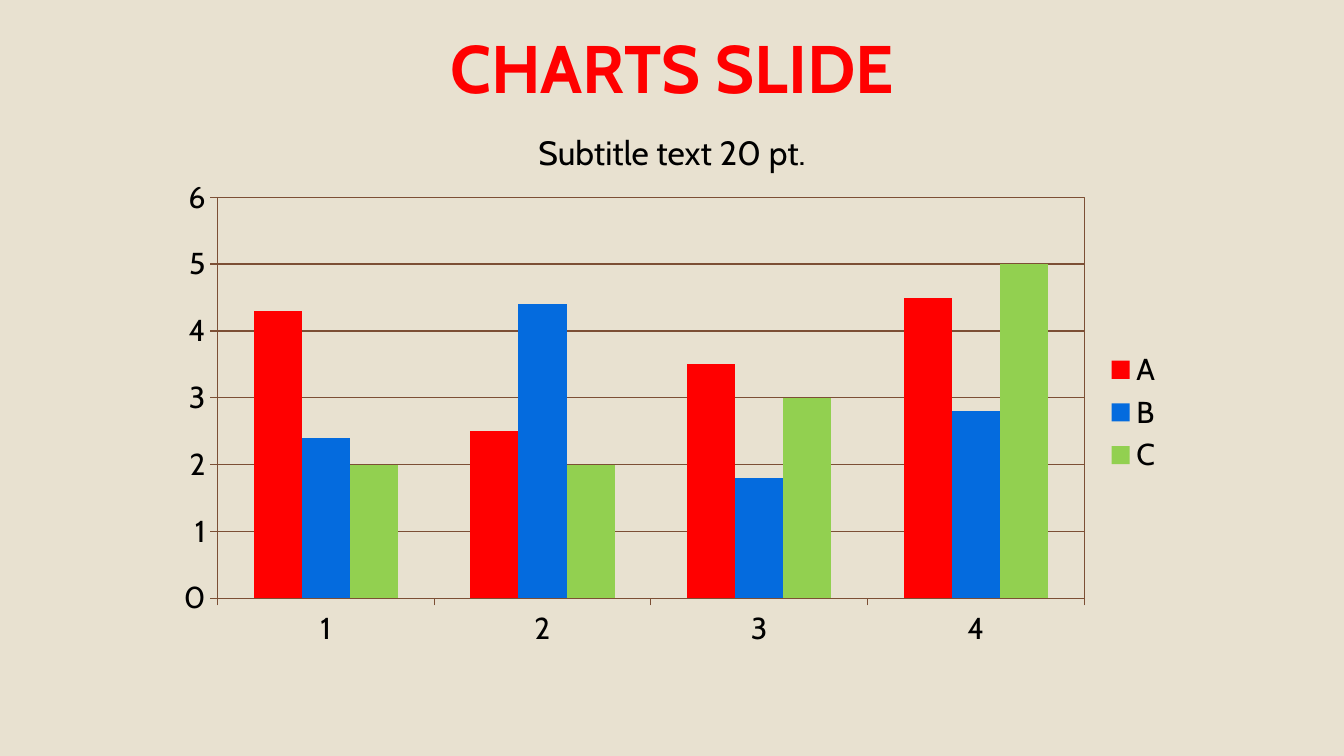
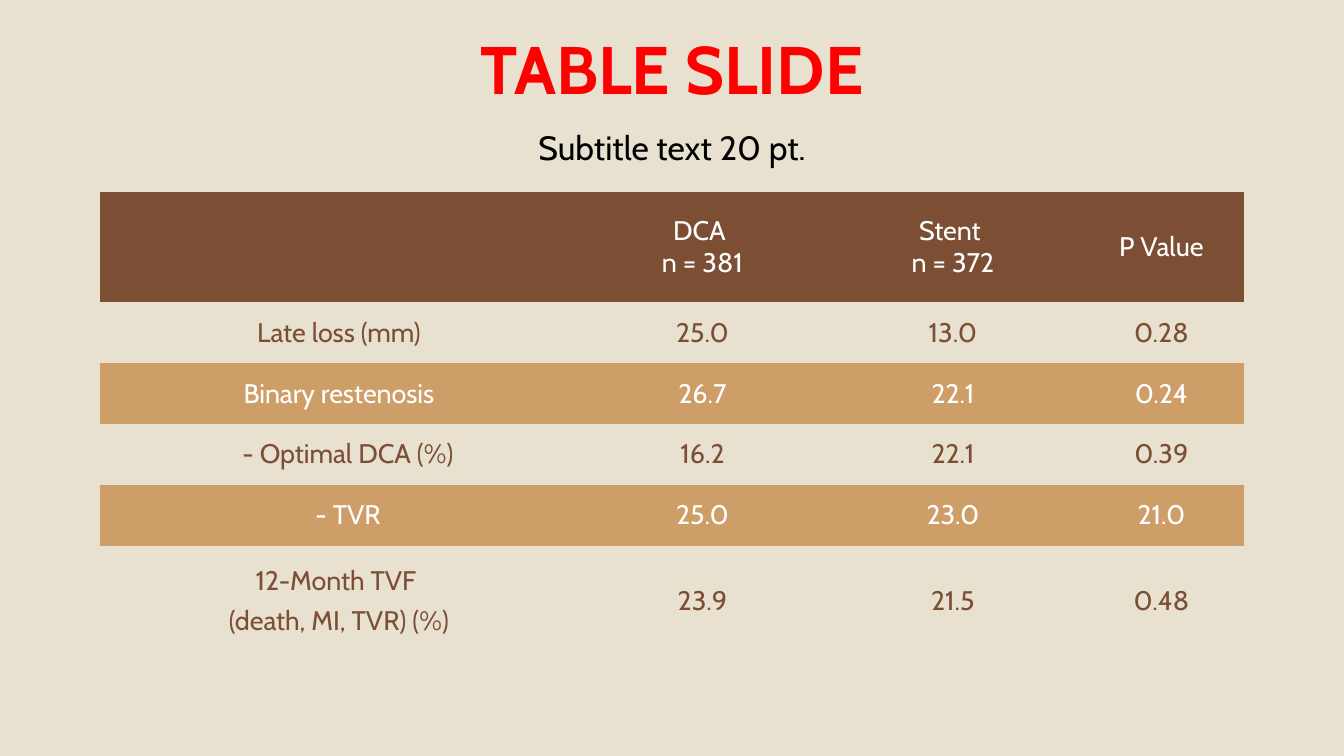
from lxml import etree
from pptx import Presentation
from pptx.chart.data import CategoryChartData
from pptx.dml.color import RGBColor
from pptx.enum.chart import XL_CHART_TYPE, XL_LEGEND_POSITION, XL_TICK_MARK
from pptx.enum.text import MSO_ANCHOR, MSO_AUTO_SIZE, PP_ALIGN
from pptx.oxml import parse_xml
from pptx.oxml.ns import nsdecls, qn
from pptx.util import Emu, Pt

FONT = "Cabin"
SAND, RED, BLUE, GREEN = "E8E1D0", "FF0000", "046BDE", "92D050"
BROWN, TAN, BLACK, WHITE = "7C4F35", "CD9E67", "000000", "FFFFFF"
NO_GRID_STYLE = "{2D5ABB26-0587-4C30-8999-92F81FD0307C}"
LEFT, WIDTH = 100, 1144
SUBTITLE = "Subtitle text 20 pt."

CATEGORIES = ["1", "2", "3", "4"]
SERIES = [
    ("A", RED, (4.3, 2.5, 3.5, 4.5)),
    ("B", BLUE, (2.4, 4.4, 1.8, 2.8)),
    ("C", GREEN, (2, 2, 3, 5)),
]

ROWS = [
    ["", "DCA \nn = 381", "Stent \nn = 372", "P Value"],
    ["Late loss (mm)", "25.0", "13.0", "0.28"],
    ["Binary restenosis", "26.7", "22.1", "0.24"],
    ["- Optimal DCA (%)", "16.2", "22.1", "0.39"],
    ["- TVR", "25.0", "23.0", "21.0"],
    [("12-Month TVF ", "(death, MI, TVR) (%)"), "23.9", "21.5", "0.48"],
]
COL_WIDTHS = [478, 249, 252, 165]
ROW_HEIGHTS = [110, 61, 61, 61, 61, 110]


def px(n):
    return Emu(round(n * 914400 / 121))


def rgb(value):
    return RGBColor.from_string(value)


def style_font(font, size, color, bold=False):
    font.name = FONT
    font.size = Pt(size)
    font.bold = bold
    font.color.rgb = rgb(color)


def style_line(line, color=BROWN):
    line.color.rgb = rgb(color)
    line.width = Pt(0.75)


def write(p, text, size, color, bold=False):
    p.alignment = PP_ALIGN.CENTER
    for i, line in enumerate(text.split("\n")):
        if i:
            p.add_line_break()
        r = p.add_run()
        r.text = line
        style_font(r.font, size, color, bold)


def fill_heading(sp, top, height, text, size, color, bold=False):
    sp.left, sp.top, sp.width, sp.height = px(LEFT), px(top), px(WIDTH), px(height)
    tf = sp.text_frame
    tf.word_wrap = True
    tf.auto_size = MSO_AUTO_SIZE.NONE
    tf.vertical_anchor = MSO_ANCHOR.MIDDLE
    tf.margin_left = tf.margin_right = tf.margin_top = tf.margin_bottom = px(6)
    p = tf.paragraphs[0]
    p.line_spacing = 0.9
    p.space_before = Pt(0)
    write(p, text, size, color, bold)


def add_headed_slide(prs, title, title_top, title_height, subtitle_height):
    s = prs.slides.add_slide(prs.slide_layouts.get_by_name("Title Only"))
    fill_heading(s.shapes.title, title_top, title_height, title, 40, RED, True)
    subtitle = s.shapes.add_textbox(0, 0, 0, 0)
    fill_heading(subtitle, 131, subtitle_height, SUBTITLE, 20, BLACK)
    return s


def frame_plot(chart, x, y, w, h):
    plot_area = chart.plots[0]._element.getparent()
    for old in plot_area.findall(qn("c:layout")):
        plot_area.remove(old)
    layout = etree.Element(qn("c:layout"))
    manual = etree.SubElement(layout, qn("c:manualLayout"))
    settings = [("layoutTarget", "inner"), ("xMode", "edge"), ("yMode", "edge"),
                ("x", x), ("y", y), ("w", w), ("h", h)]
    for tag, value in settings:
        etree.SubElement(manual, qn(f"c:{tag}")).set("val", str(value))
    plot_area.insert(0, layout)
    plot_area.append(parse_xml(
        f'<c:spPr {nsdecls("c", "a")}><a:noFill/><a:ln w="9525"><a:solidFill>'
        f'<a:srgbClr val="{BROWN}"/></a:solidFill></a:ln></c:spPr>'))


def style_axis(axis):
    axis.major_tick_mark = XL_TICK_MARK.OUTSIDE
    axis.minor_tick_mark = XL_TICK_MARK.NONE
    style_line(axis.format.line)
    style_font(axis.tick_labels.font, 18, BLACK)


def add_column_chart(s, left, top, width, height):
    data = CategoryChartData()
    data.categories = CATEGORIES
    for name, _, values in SERIES:
        data.add_series(name, values)
    chart = s.shapes.add_chart(XL_CHART_TYPE.COLUMN_CLUSTERED, px(left), px(top),
                               px(width), px(height), data).chart
    style_font(chart.font, 18, BLACK)
    chart.has_title = False
    chart.has_legend = True
    chart.legend.position = XL_LEGEND_POSITION.RIGHT
    chart.legend.include_in_layout = False
    style_font(chart.legend.font, 18, BLACK)
    plot = chart.plots[0]
    plot.gap_width = 150
    plot.overlap = 0
    plot.vary_by_categories = False
    for series, (_, color, _) in zip(plot.series, SERIES):
        series.format.fill.solid()
        series.format.fill.fore_color.rgb = rgb(color)
    style_axis(chart.category_axis)
    axis = chart.value_axis
    style_axis(axis)
    axis.minimum_scale, axis.maximum_scale, axis.major_unit = 0, 6, 1
    axis.has_major_gridlines = True
    style_line(axis.major_gridlines.format.line)
    frame_plot(chart, 0.05, 0.06, 0.86, 0.82)


def fill_cell(cell, content, color, fill):
    cell.vertical_anchor = MSO_ANCHOR.MIDDLE
    if fill:
        cell.fill.solid()
        cell.fill.fore_color.rgb = rgb(fill)
    else:
        cell.fill.background()
    tf = cell.text_frame
    lines = [content] if isinstance(content, str) else content
    for i, line in enumerate(lines):
        p = tf.add_paragraph() if i else tf.paragraphs[0]
        if i:
            p.space_before = Pt(5)
        if line.startswith("- "):
            p._p.get_or_add_pPr().set("marL", str(px(18)))
        if line:
            write(p, line, 16, color)


def row_colors(i):
    if i == 0:
        return WHITE, BROWN
    return (BROWN, None) if i % 2 else (WHITE, TAN)


def add_results_table(s, top):
    table = s.shapes.add_table(len(ROWS), len(COL_WIDTHS), px(LEFT), px(top),
                               px(WIDTH), px(sum(ROW_HEIGHTS))).table
    table.first_row = table.horz_banding = False
    table._tbl.tblPr.find(qn("a:tableStyleId")).text = NO_GRID_STYLE
    for col, width in zip(table.columns, COL_WIDTHS):
        col.width = px(width)
    for i, (row, height) in enumerate(zip(table.rows, ROW_HEIGHTS)):
        row.height = px(height)
        for cell, content in zip(row.cells, ROWS[i]):
            fill_cell(cell, content, *row_colors(i))


def main():
    prs = Presentation()
    prs.slide_width, prs.slide_height = px(1344), px(756)
    background = prs.slide_master.background.fill
    background.solid()
    background.fore_color.rgb = rgb(SAND)
    s = add_headed_slide(prs, "CHARTS SLIDE", 23, 98, 47)
    add_column_chart(s, 167, 168, 1008, 489)
    s = add_headed_slide(prs, "TABLE SLIDE", 25, 96, 37)
    add_results_table(s, 192)
    prs.save("out.pptx")


if __name__ == "__main__":
    main()
